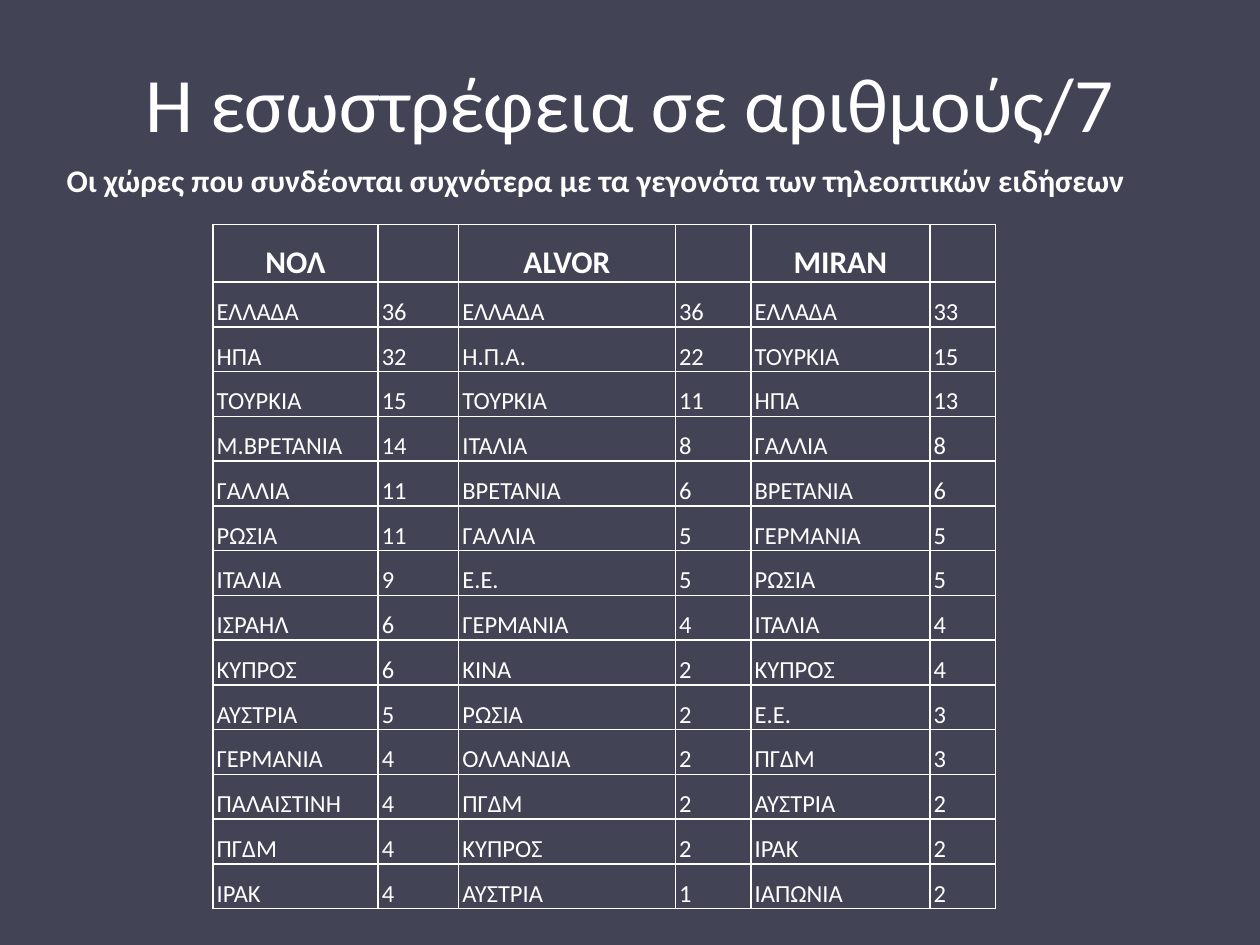
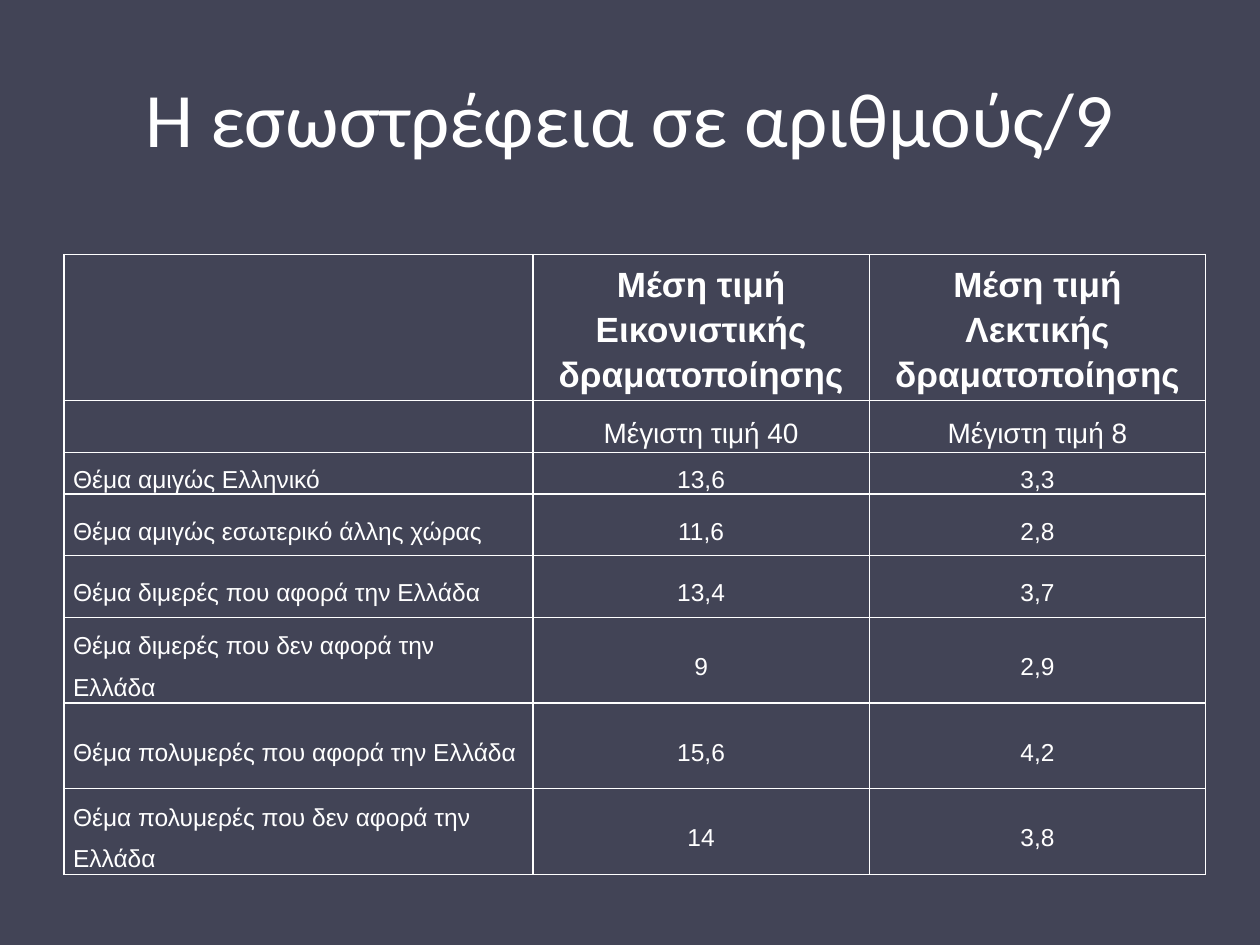
from lxml import etree
from pptx import Presentation
from pptx.dml.color import RGBColor
from pptx.enum.text import MSO_ANCHOR, MSO_AUTO_SIZE, PP_ALIGN
from pptx.oxml.ns import qn
from pptx.util import Inches, Pt

LEFT, CENTER, JUSTIFY = PP_ALIGN.LEFT, PP_ALIGN.CENTER, PP_ALIGN.JUSTIFY
TOP, MIDDLE, BOTTOM = MSO_ANCHOR.TOP, MSO_ANCHOR.MIDDLE, MSO_ANCHOR.BOTTOM
NO_FIT = MSO_AUTO_SIZE.NONE
TITLE_ONLY = 5
BACK, INK = "424456", "FFFFFF"
HEAD_FONT, GRID_FONT = "Calibri", "Arial"

CHANNELS = ["ΝΟΛ", "", "ALVOR", "", "MIRAN", ""]
COUNTRIES = [
    ("ΕΛΛΑΔΑ", "36", "ΕΛΛΑΔΑ", "36", "EΛΛΑΔΑ", "33"),
    ("ΗΠΑ", "32", "Η.Π.Α.", "22", "ΤΟΥΡΚΙΑ", "15"),
    ("ΤΟΥΡΚΙΑ", "15", "ΤΟΥΡΚΙΑ", "11", "ΗΠΑ", "13"),
    ("Μ.ΒΡΕΤΑΝΙΑ", "14", "ΙΤΑΛΙΑ", "8", "ΓΑΛΛΙΑ", "8"),
    ("ΓΑΛΛΙΑ", "11", "ΒΡΕΤΑΝΙΑ", "6", "ΒΡΕΤΑΝΙΑ", "6"),
    ("ΡΩΣΙΑ", "11", "ΓΑΛΛΙΑ", "5", "ΓΕΡΜΑΝΙΑ", "5"),
    ("ΙΤΑΛΙΑ", "9", "Ε.Ε.", "5", "ΡΩΣΙΑ", "5"),
    ("ΙΣΡΑΗΛ", "6", "ΓΕΡΜΑΝΙΑ", "4", "ΙΤΑΛΙΑ", "4"),
    ("ΚΥΠΡΟΣ", "6", "ΚΙΝΑ", "2", "ΚΥΠΡΟΣ", "4"),
    ("ΑΥΣΤΡΙΑ", "5", "ΡΩΣΙΑ", "2", "Ε.Ε.", "3"),
    ("ΓΕΡΜΑΝΙΑ", "4", "ΟΛΛΑΝΔΙΑ", "2", "ΠΓΔΜ", "3"),
    ("ΠΑΛΑΙΣΤΙΝΗ", "4", "ΠΓΔΜ", "2", "ΑΥΣΤΡΙΑ", "2"),
    ("ΠΓΔΜ", "4", "ΚΥΠΡΟΣ", "2", "ΙΡΑΚ", "2"),
    ("ΙΡΑΚ", "4", "ΑΥΣΤΡΙΑ", "1", "ΙΑΠΩΝΙΑ", "2"),
]

MEANS = ["", "Μέση τιμή Εικονιστικής δραματοποίησης",
         "Μέση τιμή Λεκτικής δραματοποίησης"]
LIMITS = ["", "Μέγιστη τιμή 40", "Μέγιστη τιμή 8"]
TOPICS = [
    ("Θέμα αμιγώς Ελληνικό", "13,6", "3,3"),
    ("Θέμα αμιγώς εσωτερικό άλλης χώρας", "11,6", "2,8"),
    ("Θέμα διμερές που αφορά την Ελλάδα", "13,4", "3,7"),
    ("Θέμα διμερές που δεν αφορά την Ελλάδα", "9", "2,9"),
    ("Θέμα πολυμερές που αφορά την Ελλάδα", "15,6", "4,2"),
    ("Θέμα πολυμερές που δεν αφορά την Ελλάδα", "14", "3,8"),
]


def color(code):
    return RGBColor.from_string(code)


def border(cell, width=1):
    """Draw a thin line on all four sides of a cell."""
    props = cell._tc.get_or_add_tcPr()
    for side in ("a:lnL", "a:lnR", "a:lnT", "a:lnB"):
        line = etree.SubElement(props, qn(side), w=str(Pt(width)))
        fill = etree.SubElement(line, qn("a:solidFill"))
        etree.SubElement(fill, qn("a:srgbClr"), val=INK)


class Deck:
    def __init__(self):
        self.prs = Presentation()
        self.prs.slide_width, self.prs.slide_height = Inches(10), Inches(7.5)
        fill = self.prs.slide_master.background.fill
        fill.solid()
        fill.fore_color.rgb = color(BACK)
        self.slide = None

    def label(self, para, text, size, font=HEAD_FONT, bold=False, align=LEFT):
        """Set the text and look of a paragraph."""
        para.text = text
        para.alignment = align
        para.font.name, para.font.size = font, Pt(size)
        para.font.bold = bold
        para.font.color.rgb = color(INK)

    def start(self, title, height):
        """Add a slide with its title."""
        layout = self.prs.slide_layouts[TITLE_ONLY]
        self.slide = self.prs.slides.add_slide(layout)
        shape = self.slide.shapes.title
        shape.left, shape.top = Inches(0.5), Inches(0.3)
        shape.width, shape.height = Inches(9), Inches(height)
        frame = shape.text_frame
        frame.auto_size = NO_FIT
        frame.vertical_anchor = MIDDLE
        self.label(frame.paragraphs[0], title, 44, align=CENTER)

    def note(self, text, *box):
        frame = self.slide.shapes.add_textbox(*map(Inches, box)).text_frame
        frame.word_wrap = True
        self.label(frame.paragraphs[0], text, 18, bold=True)

    def grid(self, left, top, cols, rows):
        """Add an empty table with the given column widths and row heights."""
        table = self.slide.shapes.add_table(
            len(rows), len(cols), Inches(left), Inches(top),
            Inches(sum(cols)), Inches(sum(rows))).table
        table.first_row = table.horz_banding = False
        for col, width in zip(table.columns, cols):
            col.width = Inches(width)
        for row, height in zip(table.rows, rows):
            row.height = Inches(height)
        return table

    def row(self, table, index, texts, size, aligns, anchors, pad,
            spacing=1.5, **style):
        """Fill one table row, with alignment and anchor by column."""
        cells = table.rows[index].cells
        for cell, text, align, anchor in zip(cells, texts, aligns, anchors):
            border(cell)
            cell.fill.background()
            cell.margin_left = cell.margin_right = Inches(pad)
            cell.margin_top = cell.margin_bottom = 0
            cell.vertical_anchor = anchor
            para = cell.text_frame.paragraphs[0]
            self.label(para, text, size, align=align, **style)
            para.line_spacing = spacing


def countries(deck):
    deck.start("Η εσωστρέφεια σε αριθμούς/7", 1.01)
    table = deck.grid(1.69, 1.78, [1.31, 0.64, 1.72, 0.6, 1.42, 0.52],
                      [0.46] + [4.97 / len(COUNTRIES)] * len(COUNTRIES))
    deck.row(table, 0, CHANNELS, 18, [CENTER] * 6, [BOTTOM] * 6, 0.03,
             bold=True)
    aligns = [LEFT, LEFT, LEFT, JUSTIFY, LEFT, LEFT]
    for index, texts in enumerate(COUNTRIES, 1):
        deck.row(table, index, texts, 14, aligns, [TOP, MIDDLE] * 3, 0.03)
    deck.note("Οι χώρες που συνδέονται συχνότερα με τα γεγονότα των "
              "τηλεοπτικών ειδήσεων", 0.43, 1.23, 8.74, 0.71)


def topics(deck):
    deck.start("Η εσωστρέφεια σε αριθμούς/9", 1.25)
    table = deck.grid(0.51, 2.02, [3.72, 2.67, 2.67],
                      [1.16, 0.41, 0.33] + [0.49] * 2 + [0.68] * 3)
    look = {"anchors": [MIDDLE] * 3, "pad": 0.07, "font": GRID_FONT}
    aligns = [LEFT, CENTER, CENTER]
    deck.row(table, 0, MEANS, 20, aligns, spacing=1.15, bold=True, **look)
    deck.row(table, 1, LIMITS, 16, aligns, **look)
    for index, texts in enumerate(TOPICS, 2):
        deck.row(table, index, texts, 14, aligns, **look)


def main():
    deck = Deck()
    countries(deck)
    topics(deck)
    deck.prs.save("out.pptx")


if __name__ == "__main__":
    main()
